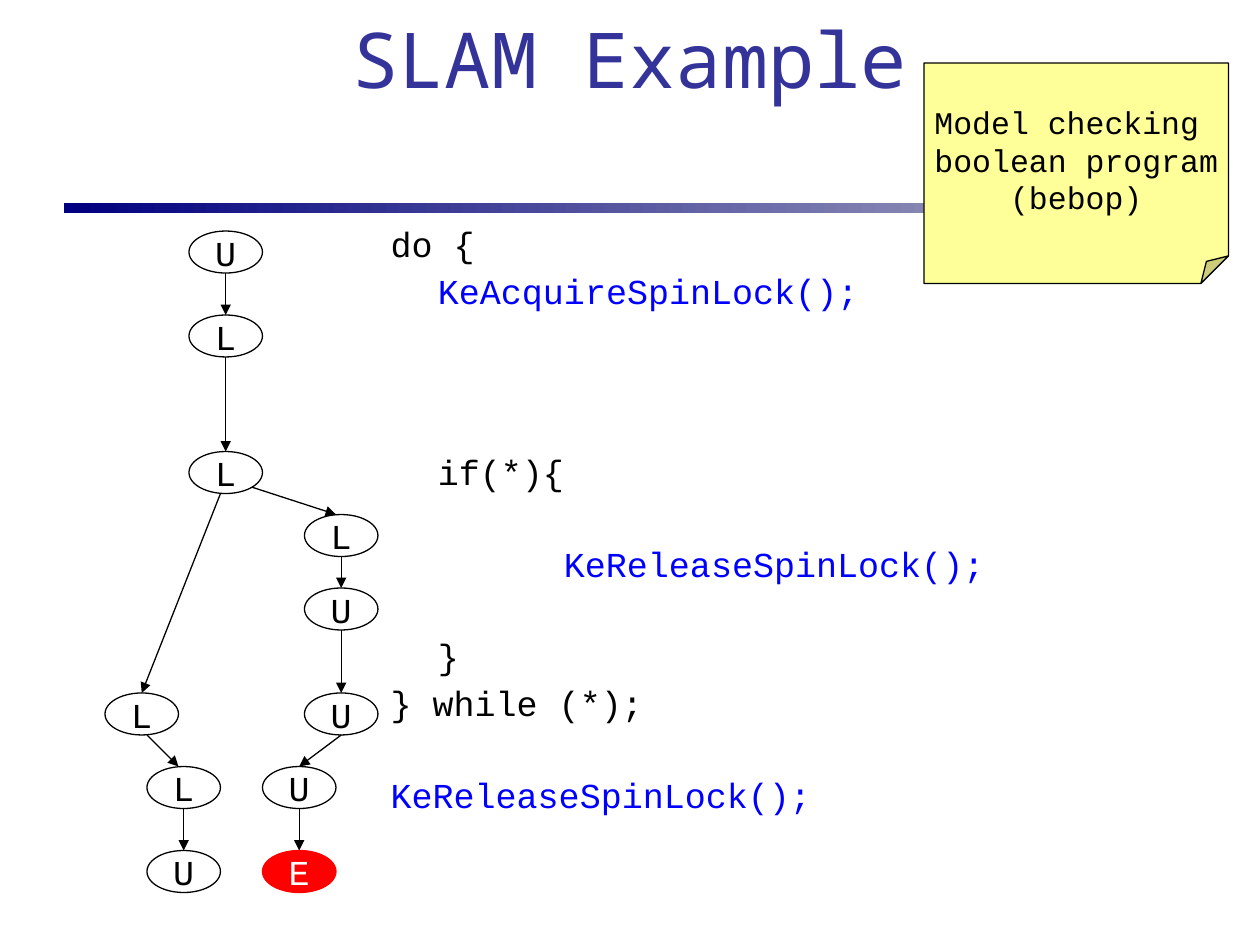
from lxml.etree import SubElement as Sub
from pptx import Presentation
from pptx.dml.color import RGBColor as Rgb
from pptx.enum.shapes import MSO_CONNECTOR as Link, MSO_SHAPE as Form
from pptx.enum.text import MSO_ANCHOR as Anchor, MSO_AUTO_SIZE as Fit, PP_ALIGN as Align
from pptx.oxml.ns import qn
from pptx.util import Pt

PX = 914400 // 120
HUES = {"ink": "000000", "call": "0000FF", "title": "333399", "note": "FFFF99",
        "error": "FF0000", "white": "FFFFFF", "navy": "000080", "pale": "B0B0C3"}
MONO = "Courier New"


def hue(name):
    return Rgb.from_string(HUES[name])


def write(frame, text, font=MONO, size=20, color="ink", align=Align.CENTER,
          anchor=Anchor.MIDDLE, wrap=False):
    frame.word_wrap = wrap
    frame.auto_size = Fit.NONE
    frame.vertical_anchor = anchor
    frame.text = text
    for para in frame.paragraphs:
        para.alignment = align
        for run in para.runs:
            run.font.name = font
            run.font.size = Pt(size)
            run.font.color.rgb = hue(color)


deck = Presentation()
deck.slide_width, deck.slide_height = 1200 * PX, 900 * PX
slide = deck.slides.add_slide(deck.slide_layouts[1])
shapes = slide.shapes

rule = shapes.add_shape(Form.RECTANGLE, 61 * PX, 193 * PX, 1079 * PX, 10 * PX)
rule.shadow.inherit = False
rule.line.fill.background()
rule.fill.gradient()
rule.fill.gradient_angle = 0
for stop, name, place in zip(rule.fill.gradient_stops, ("navy", "pale"), (0, 1)):
    stop.color.rgb = hue(name)
    stop.position = place

title = shapes.title
title.left, title.top, title.width, title.height = 60 * PX, -20 * PX, 1080 * PX, 150 * PX
write(title.text_frame, "SLAM Example", font="Noto Sans Mono", size=44, color="title", wrap=True)

code = [
    ("do {", 0, 0, "ink"),
    ("KeAcquireSpinLock();", 45, 0, "call"),
    ("if(*){", 45, 3, "ink"),
    ("KeReleaseSpinLock();", 165, 1, "call"),
    ("}", 45, 1, "ink"),
    ("} while (*);", 0, 0, "ink"),
    ("KeReleaseSpinLock();", 0, 1, "call"),
]
ROW, GAP = 25.65, 5.25
body = slide.placeholders[1]
body.left, body.top, body.width, body.height = 360 * PX, 210 * PX, 810 * PX, 590 * PX
write(body.text_frame, "\n".join(row[0] for row in code),
      align=Align.LEFT, anchor=Anchor.TOP, wrap=True)
for para, (text, left, skip, color) in zip(body.text_frame.paragraphs, code):
    para.line_spacing = 0.9
    para.space_before = Pt(GAP + skip * ROW)
    para.runs[0].font.color.rgb = hue(color)
    props = para._p.get_or_add_pPr()
    props.set("marL", str(left * PX))
    props.set("indent", "0")
    Sub(props, qn("a:buNone"))

note = shapes.add_shape(Form.FOLDED_CORNER, 880 * PX, 60 * PX, 290 * PX, 210 * PX)
note.shadow.inherit = False
shape = note._element.spPr.find(qn("a:prstGeom"))
Sub(shape.get_or_add_avLst(), qn("a:gd"), name="adj", fmla="val 12500")
note.fill.solid()
note.fill.fore_color.rgb = hue("note")
note.line.color.rgb = hue("ink")
note.line.width = Pt(0.75)
write(note.text_frame, "Model checking \nboolean program\n(bebop)", size=18)

WIDE, HIGH = 70, 40
MID = WIDE // 2
DOWN = (MID, HIGH)
states = [
    ("U", 180, 220), ("L", 180, 300), ("L", 180, 430),
    ("L", 100, 660), ("L", 140, 730), ("U", 140, 810),
    ("L", 290, 490), ("U", 290, 560), ("U", 290, 660),
    ("U", 250, 730), ("E", 250, 810),
]
nodes = []
for text, left, top in states:
    node = shapes.add_shape(Form.OVAL, left * PX, top * PX, WIDE * PX, HIGH * PX)
    node.shadow.inherit = False
    bad = text == "E"
    if bad:
        node.fill.solid()
        node.fill.fore_color.rgb = hue("error")
    else:
        node.fill.background()
    node.line.color.rgb = hue("error" if bad else "ink")
    node.line.width = Pt(0.75)
    write(node.text_frame, text, color="white" if bad else "ink")
    nodes.append(node)

edges = [
    (0, 1, DOWN, MID), (1, 2, DOWN, MID), (2, 3, (30, HIGH), MID),
    (2, 6, (60, 34), 30), (3, 4, (40, HIGH), 30), (4, 5, DOWN, MID),
    (6, 7, DOWN, MID), (7, 8, DOWN, MID), (8, 9, DOWN, MID), (9, 10, DOWN, MID),
]
for tail, head, (dx, dy), end in edges:
    old, new = nodes[tail], nodes[head]
    line = shapes.add_connector(Link.STRAIGHT, old.left + dx * PX, old.top + dy * PX,
                                new.left + end * PX, new.top)
    if end == MID:
        line.end_connect(new, 0)
    line.line.color.rgb = hue("ink")
    line.line.width = Pt(0.75)
    Sub(line.line._get_or_add_ln(), qn("a:tailEnd"), type="triangle")
    Sub(line._element.spPr, qn("a:effectLst"))

deck.save("out.pptx")
